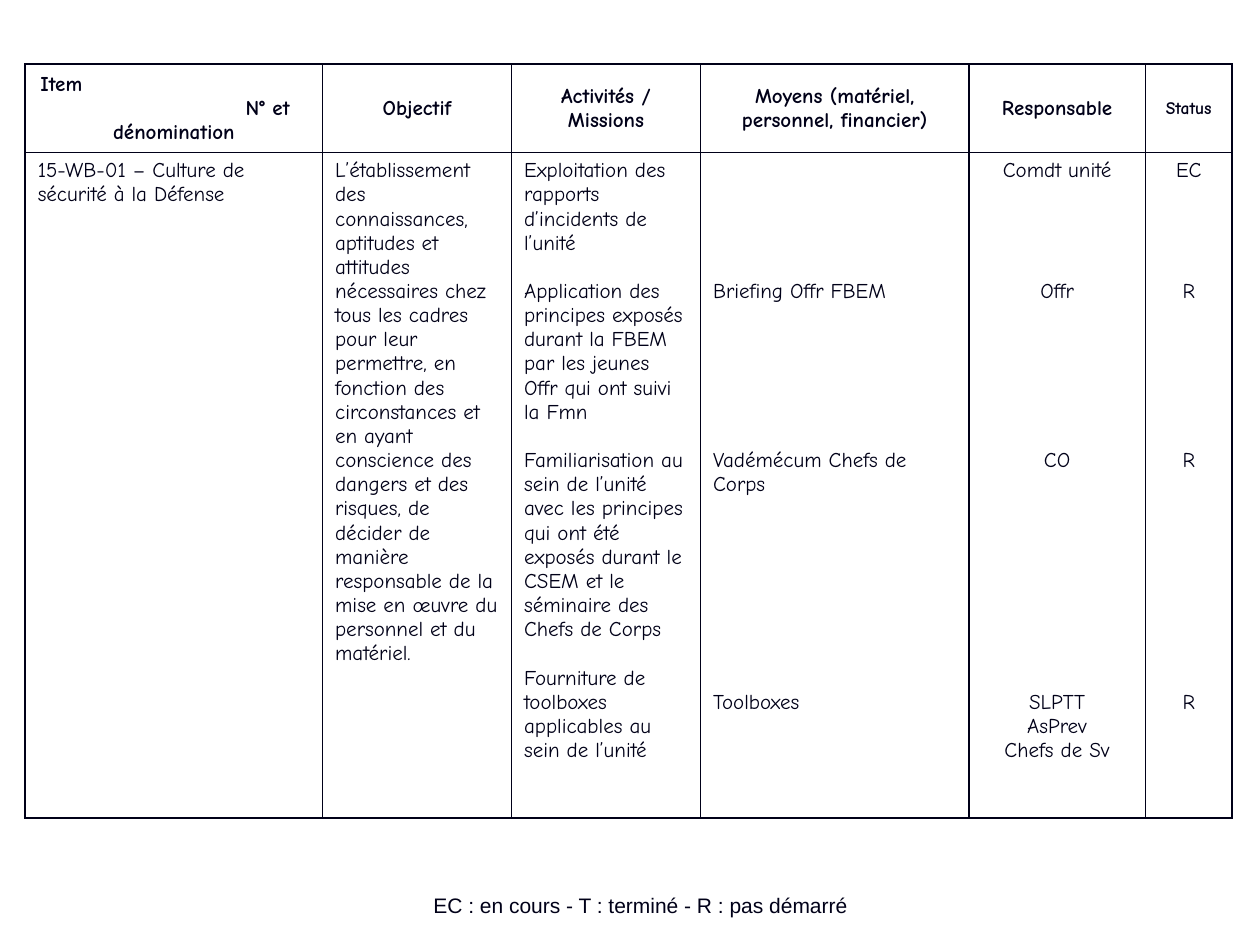
from lxml import etree
from pptx import Presentation
from pptx.dml.color import RGBColor
from pptx.enum.text import MSO_ANCHOR, PP_ALIGN
from pptx.oxml.ns import qn
from pptx.util import Inches, Pt

LEFT, CENTER = PP_ALIGN.LEFT, PP_ALIGN.CENTER
MIDDLE, TOP, BOTTOM = MSO_ANCHOR.MIDDLE, MSO_ANCHOR.TOP, MSO_ANCHOR.BOTTOM

INK = "000018"
TABLE_FONT, LEGEND_FONT = "Comic Neue", "Arial"
SIZE = 12
LINE = 13.8
MARGIN_Y = 0.05

LEGEND = "EC : en cours - T : terminé - R : pas démarré"
COL_WIDTHS = [2.36, 1.5, 1.5, 2.13, 1.4, 0.69]
ROW_HEIGHTS = [0.68, 5.28]

ITEM_HEADER = [("Item", LEFT, 0.02), ("N° et", LEFT, 1.65), ("dénomination", CENTER, 0)]
HEADERS = [
    ("Objectif", SIZE),
    ("Activités / Missions", SIZE),
    ("Moyens (matériel, personnel, financier)", SIZE),
    ("Responsable", SIZE),
    ("Status", 10),
]

# Each entry: free lines above, text
BODY = [
    (LEFT, [(0, "15-WB-01 – Culture de sécurité à la Défense")]),
    (LEFT, [(0, "L’établissement des connaissances, aptitudes et attitudes nécessaires "
                "chez tous les cadres pour leur permettre, en fonction des circonstances "
                "et en ayant conscience des dangers et des risques, de décider de manière "
                "responsable de la mise en œuvre du personnel et du matériel.")]),
    (LEFT, [
        (0, "Exploitation des rapports d’incidents de l’unité"),
        (1, "Application des principes exposés durant la FBEM par les jeunes Offr "
            "qui ont suivi la Fmn"),
        (1, "Familiarisation au sein de l’unité avec les principes qui ont été exposés "
            "durant le CSEM et le séminaire des Chefs de Corps"),
        (1, "Fourniture de toolboxes applicables au sein de l’unité"),
    ]),
    (LEFT, [(5, "Briefing Offr FBEM"), (6, "Vadémécum Chefs de Corps"), (8, "Toolboxes")]),
    (CENTER, [(0, "Comdt unité"), (4, "Offr"), (6, "CO"), (9, "SLPTT"),
              (0, "AsPrev"), (0, "Chefs de Sv")]),
    (CENTER, [(0, "EC"), (4, "R"), (6, "R"), (9, "R")]),
]


def color(value):
    return RGBColor.from_string(value)


def add_text(tf, i, text, align, size=SIZE, font=TABLE_FONT, bold=False):
    p = tf.add_paragraph() if i else tf.paragraphs[0]
    p.alignment = align
    r = p.add_run()
    r.text = text
    r.font.name, r.font.size, r.font.bold = font, Pt(size), bold
    r.font.color.rgb = color(INK)
    return p


def format_cell(cell, anchor):
    cell.vertical_anchor = anchor
    cell.margin_left = cell.margin_right = Inches(0.1)
    cell.margin_top = cell.margin_bottom = Inches(MARGIN_Y)
    tc_pr = cell._tc.get_or_add_tcPr()
    for side in ("lnL", "lnR", "lnT", "lnB"):
        ln = etree.SubElement(tc_pr, qn(f"a:{side}"), w=str(Pt(1)))
        fill = etree.SubElement(ln, qn("a:solidFill"))
        etree.SubElement(fill, qn("a:srgbClr"), val=INK)
    cell.fill.background()


def fill_headers(table):
    for i, (text, align, indent) in enumerate(ITEM_HEADER):
        p = add_text(table.cell(0, 0).text_frame, i, text, align, bold=True)
        p._p.get_or_add_pPr().set("marL", str(Inches(indent)))
    for col, (text, size) in enumerate(HEADERS, 1):
        add_text(table.cell(0, col).text_frame, 0, text, CENTER, size, bold=True)


def fill_body(table):
    for col, (align, entries) in enumerate(BODY):
        cell = table.cell(1, col)
        for i, (gap, text) in enumerate(entries):
            p = add_text(cell.text_frame, i, text, align)
            if i:
                p.space_before = Pt(gap * LINE)
            else:
                cell.margin_top = Inches(MARGIN_Y) + Pt(gap * LINE)


def main():
    prs = Presentation()
    prs.slide_width, prs.slide_height = Inches(10), Inches(7.5)
    s = prs.slides.add_slide(prs.slide_layouts[6])

    sp = s.shapes.add_textbox(Inches(2.33), Inches(6.83), Inches(5.51), Inches(0.5))
    tf = sp.text_frame
    tf.word_wrap = True
    tf.vertical_anchor = BOTTOM
    add_text(tf, 0, LEGEND, CENTER, font=LEGEND_FONT)

    table = s.shapes.add_table(
        len(ROW_HEIGHTS), len(COL_WIDTHS), Inches(0.2), Inches(0.51),
        Inches(sum(COL_WIDTHS)), Inches(sum(ROW_HEIGHTS))).table
    table.first_row = table.horz_banding = False
    for col, width in zip(table.columns, COL_WIDTHS):
        col.width = Inches(width)
    for row, height, anchor in zip(table.rows, ROW_HEIGHTS, (MIDDLE, TOP)):
        row.height = Inches(height)
        for cell in row.cells:
            format_cell(cell, anchor)
    fill_headers(table)
    fill_body(table)

    prs.save("out.pptx")


if __name__ == "__main__":
    main()
